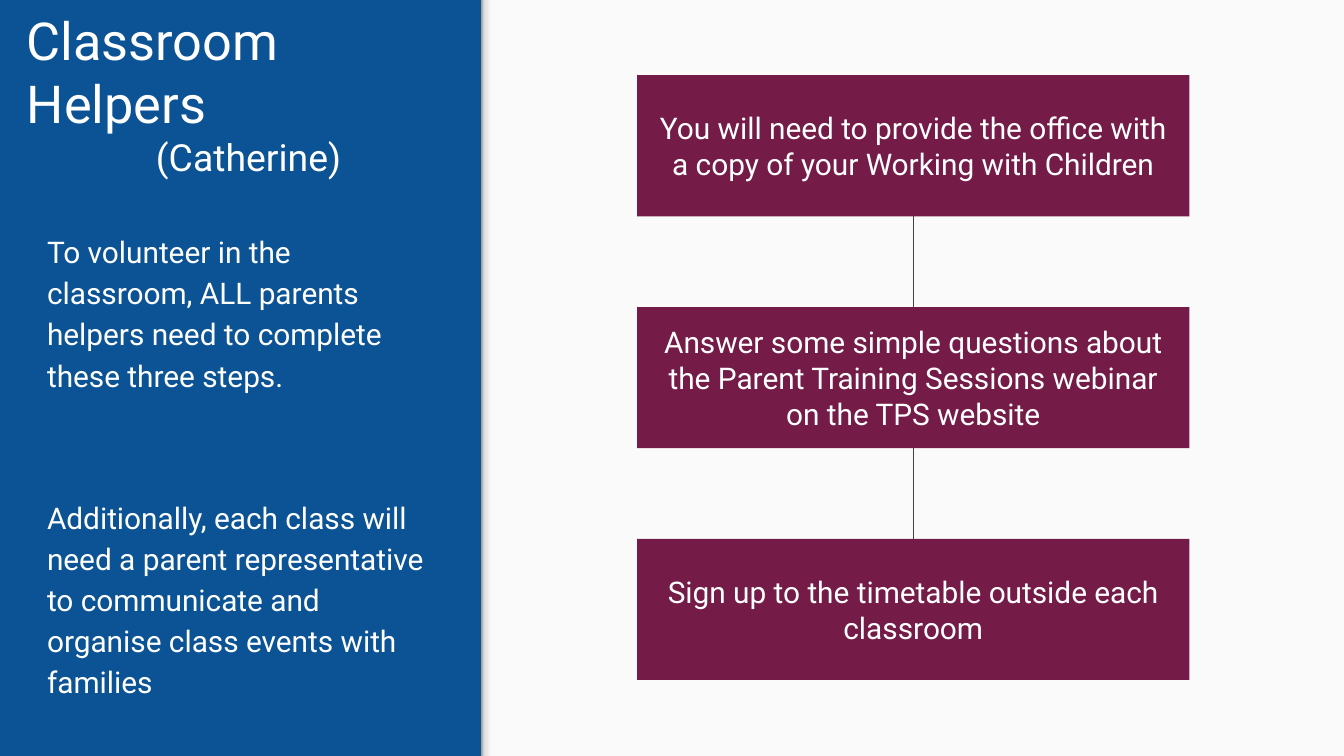
from copy import deepcopy
from dataclasses import dataclass

from lxml.etree import SubElement
from pptx import Presentation
from pptx.dml.color import RGBColor
from pptx.enum.shapes import MSO_CONNECTOR, MSO_SHAPE
from pptx.enum.text import MSO_ANCHOR, MSO_AUTO_SIZE, PP_ALIGN
from pptx.oxml.ns import qn
from pptx.util import Emu, Pt

EMU_PER_PX = 4572  # 200 px to the inch
FONT = "Roboto"
BLUE = RGBColor(0x0B, 0x53, 0x94)
PLUM = RGBColor(0x74, 0x1B, 0x47)
WHITE = RGBColor(0xFF, 0xFF, 0xFF)
PAPER = RGBColor(0xFA, 0xFA, 0xFA)
LINE_GREY = RGBColor(0x42, 0x42, 0x42)
EDGE_STOPS = (
    (0, RGBColor(0x99, 0x99, 0x99)),
    (0.2, RGBColor(0xDE, 0xDE, 0xDE)),
    (0.64, RGBColor(0xF9, 0xF9, 0xF9)),
    (1, RGBColor(0xF9, 0xF9, 0xF9)),
)


@dataclass(frozen=True)
class Area:
    left: int
    top: int
    width: int
    height: int

    def emu(self) -> tuple[Emu, ...]:
        sides = (self.left, self.top, self.width, self.height)
        return tuple(px(side) for side in sides)


@dataclass(frozen=True)
class Line:
    text: str
    size: int
    align: PP_ALIGN = PP_ALIGN.LEFT
    spacing: float = 1.0
    before: int = 0


PAGE = Area(0, 0, 2000, 1125)
PANEL = Area(716, 0, 1284, 1125)
EDGE = Area(716, 0, 24, 1125)
TITLE = Area(20, 78, 700, 208)
BODY = Area(50, 320, 614, 692)
FIRST_STEP = Area(948, 112, 822, 210)
STEP_PITCH = 345

TITLE_LINES = (
    Line("Classroom Helpers", 28),
    Line("(Catherine)", 20, PP_ALIGN.CENTER),
)
BODY_LINES = (
    Line("To volunteer in the classroom, ALL parents helpers need to "
         "complete these three steps.", 16, spacing=1.15),
    Line("Additionally, each class will need a parent representative to "
         "communicate and organise class events with families",
         16, spacing=1.15, before=54),
)
STEPS = (
    "You will need to provide the office with a copy of your Working with Children",
    "Answer some simple questions about the Parent Training Sessions webinar "
    "on the TPS website",
    "Sign up to the timetable outside each classroom",
)


def px(length: int) -> Emu:
    return Emu(length * EMU_PER_PX)


def write(box, lines: tuple[Line, ...], anchor: MSO_ANCHOR) -> None:
    frame = box.text_frame
    frame.word_wrap = True
    frame.auto_size = MSO_AUTO_SIZE.NONE
    frame.vertical_anchor = anchor
    frame.margin_left = frame.margin_right = px(20)
    frame.margin_top = frame.margin_bottom = px(20)
    for number, line in enumerate(lines):
        para = frame.add_paragraph() if number else frame.paragraphs[0]
        para.alignment = line.align
        para.line_spacing = line.spacing
        para.space_before = Pt(line.before)
        para.space_after = Pt(0)
        span = para.add_run()
        span.text = line.text
        span.font.name = FONT
        span.font.size = Pt(line.size)
        span.font.color.rgb = WHITE


def place(box, area: Area) -> None:
    box.left, box.top, box.width, box.height = area.emu()


def add_rectangle(page, area: Area, color: RGBColor):
    box = page.shapes.add_shape(MSO_SHAPE.RECTANGLE, *area.emu())
    box.shadow.inherit = False
    box.fill.solid()
    box.fill.fore_color.rgb = color
    box.line.fill.background()
    return box


def shade(box, stops: tuple[tuple[float, RGBColor], ...]) -> None:
    box.fill.gradient()
    box.fill.gradient_angle = 0
    stop_list = box._element.spPr.find(".//" + qn("a:gsLst"))
    while len(stop_list) < len(stops):
        stop_list.append(deepcopy(stop_list[0]))
    for stop, (position, color) in zip(box.fill.gradient_stops, stops):
        stop.position = position
        stop.color.rgb = color


def remove_bullets(box) -> None:
    for para in box.text_frame.paragraphs:
        properties = para._p.get_or_add_pPr()
        properties.set("marL", "0")
        properties.set("indent", "0")
        SubElement(properties, qn("a:buNone"))


def join(page, upper, lower) -> None:
    link = page.shapes.add_connector(MSO_CONNECTOR.STRAIGHT, 0, 0, 0, 0)
    link.begin_connect(upper, 2)
    link.end_connect(lower, 0)
    link.line.color.rgb = LINE_GREY
    link.line.width = Pt(0.75)
    SubElement(link._element.spPr, qn("a:effectLst"))


def main() -> None:
    deck = Presentation()
    deck.slide_width, deck.slide_height = px(PAGE.width), px(PAGE.height)
    page = deck.slides.add_slide(deck.slide_layouts[1])

    # Blue background with a pale panel and its shaded edge
    page.background.fill.solid()
    page.background.fill.fore_color.rgb = BLUE
    add_rectangle(page, PANEL, PAPER)
    shade(add_rectangle(page, EDGE, PAPER), EDGE_STOPS)

    # Title and introduction
    title, body = page.shapes.title, page.placeholders[1]
    place(title, TITLE)
    write(title, TITLE_LINES, MSO_ANCHOR.BOTTOM)
    place(body, BODY)
    write(body, BODY_LINES, MSO_ANCHOR.TOP)
    remove_bullets(body)

    # Three steps, joined from top to bottom
    previous = None
    for number, text in enumerate(STEPS):
        area = Area(FIRST_STEP.left, FIRST_STEP.top + number * STEP_PITCH,
                    FIRST_STEP.width, FIRST_STEP.height)
        box = add_rectangle(page, area, PLUM)
        write(box, (Line(text, 16, PP_ALIGN.CENTER),), MSO_ANCHOR.MIDDLE)
        if previous is not None:
            join(page, previous, box)
        previous = box

    deck.save("out.pptx")


if __name__ == "__main__":
    main()
